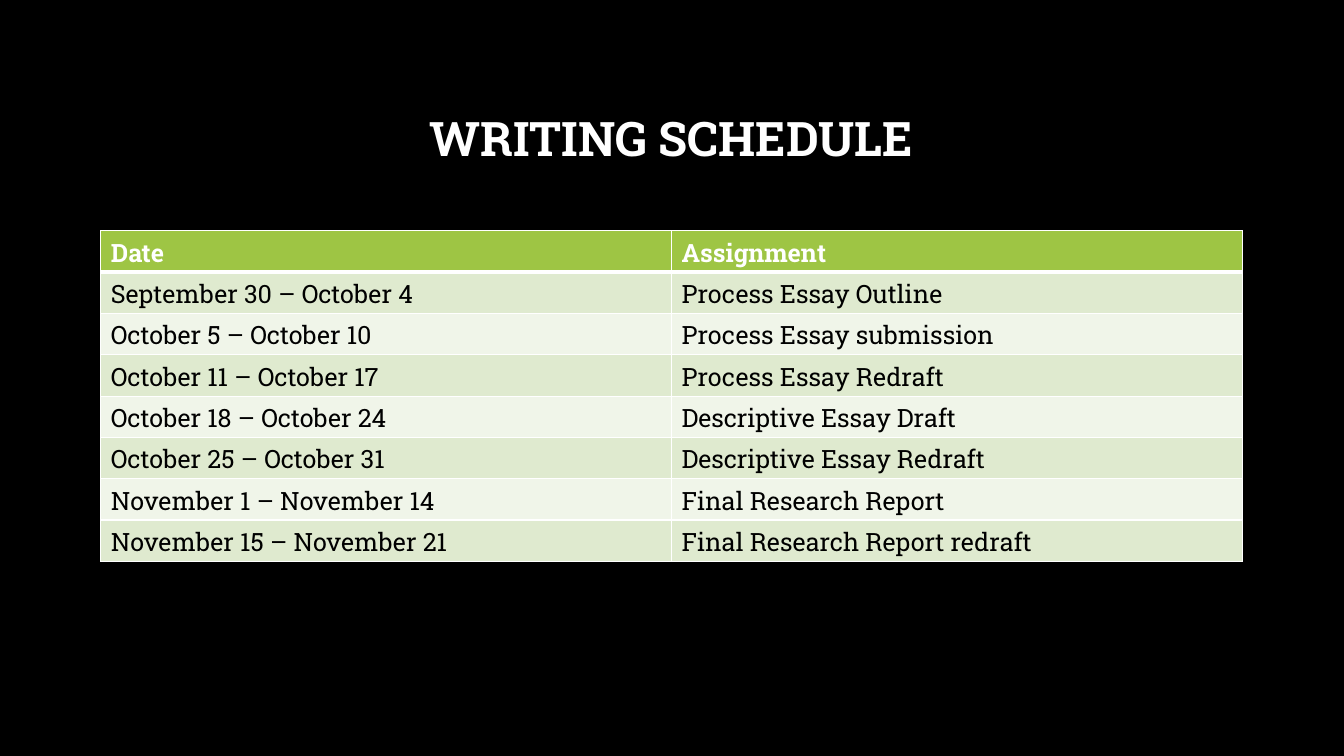
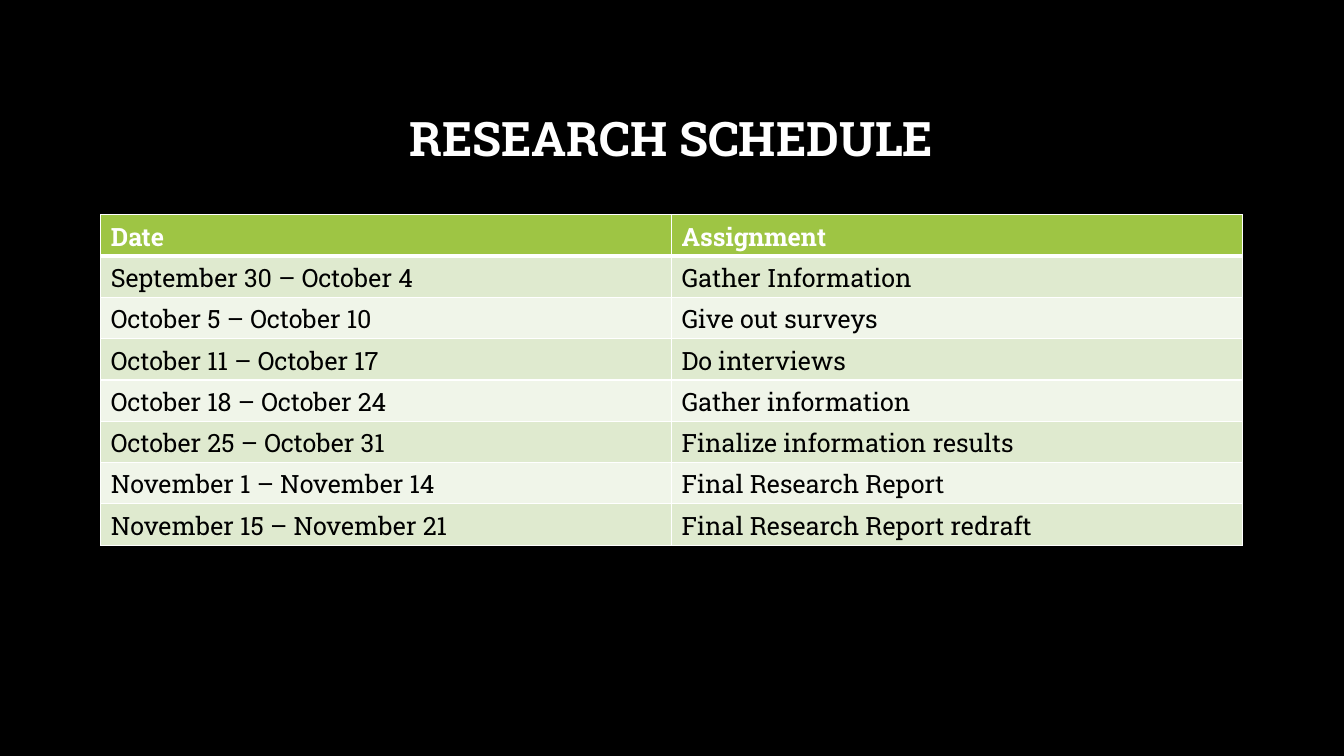
"""Build the writing and research schedule slides."""
from lxml.etree import SubElement
from pptx import Presentation
from pptx.dml.color import RGBColor
from pptx.enum.text import MSO_ANCHOR, PP_ALIGN
from pptx.oxml.ns import qn
from pptx.util import Inches, Pt

HEADER = ("Date", "Assignment")
DATES = [
    "September 30 – October 4",
    "October 5 – October 10",
    "October 11 – October 17",
    "October 18 – October 24",
    "October 25 – October 31",
    "November 1 – November 14",
    "November 15 – November 21",
]
FINAL_REPORT = ["Final Research Report", "Final Research Report redraft"]
SCHEDULES = [
    {
        "title": "WRITING SCHEDULE",
        "table_top": 2.29,
        "assignments": [
            "Process Essay Outline",
            "Process Essay submission",
            "Process Essay Redraft",
            "Descriptive Essay Draft",
            "Descriptive Essay Redraft",
        ] + FINAL_REPORT,
    },
    {
        "title": "RESEARCH SCHEDULE",
        "table_top": 2.13,
        "assignments": [
            "Gather Information",
            "Give out surveys",
            "Do interviews",
            "Gather information",
            "Finalize information results",
        ] + FINAL_REPORT,
    },
]

FONT = "Roboto Slab"
BLACK = RGBColor(0x00, 0x00, 0x00)
WHITE = RGBColor(0xFF, 0xFF, 0xFF)
GREEN = RGBColor(0x9E, 0xC5, 0x44)
BANDS = (RGBColor(0xDF, 0xEA, 0xCF), RGBColor(0xF0, 0xF5, 0xE9))
LEFT, WIDTH = Inches(1), Inches(11.32)
ROW_HEIGHT = Inches(0.41)
THIN, THICK = Pt(1), Pt(3)


def style_font(paragraph, size, color, bold):
    font = paragraph.font
    font.name, font.size, font.bold = FONT, Pt(size), bold
    font.color.rgb = color


def add_title(slide, title):
    box = slide.shapes.add_textbox(LEFT, Inches(0.67), WIDTH, Inches(1.45))
    frame = box.text_frame
    frame.word_wrap = True
    frame.vertical_anchor = MSO_ANCHOR.MIDDLE
    paragraph = frame.paragraphs[0]
    paragraph.text = title
    paragraph.alignment = PP_ALIGN.CENTER
    paragraph.line_spacing = 0.9
    style_font(paragraph, 34, WHITE, True)


def set_borders(cell, top, bottom):
    properties = cell._tc.get_or_add_tcPr()
    widths = {"a:lnL": THIN, "a:lnR": THIN, "a:lnT": top, "a:lnB": bottom}
    for tag, width in widths.items():
        line = SubElement(properties, qn(tag), w=str(width))
        fill = SubElement(line, qn("a:solidFill"))
        SubElement(fill, qn("a:srgbClr"), val=str(WHITE))


def add_schedule(slide, top, assignments):
    rows = [HEADER, *zip(DATES, assignments)]
    table = slide.shapes.add_table(
        len(rows), len(HEADER), LEFT, Inches(top), WIDTH, ROW_HEIGHT * len(rows)
    ).table
    for row_index, row in enumerate(rows):
        is_header = row_index == 0
        for column_index, text in enumerate(row):
            cell = table.cell(row_index, column_index)
            cell.text = text
            style_font(cell.text_frame.paragraphs[0], 18,
                       WHITE if is_header else BLACK, is_header)
            set_borders(cell, THICK if row_index == 1 else THIN,
                        THICK if is_header else THIN)
            cell.fill.solid()
            cell.fill.fore_color.rgb = GREEN if is_header else BANDS[(row_index - 1) % 2]


def main():
    presentation = Presentation()
    presentation.slide_width = Inches(13.33)
    presentation.slide_height = Inches(7.5)
    for schedule in SCHEDULES:
        slide = presentation.slides.add_slide(presentation.slide_layouts[6])
        slide.background.fill.solid()
        slide.background.fill.fore_color.rgb = BLACK
        add_title(slide, schedule["title"])
        add_schedule(slide, schedule["table_top"], schedule["assignments"])
    presentation.save("out.pptx")


if __name__ == "__main__":
    main()
